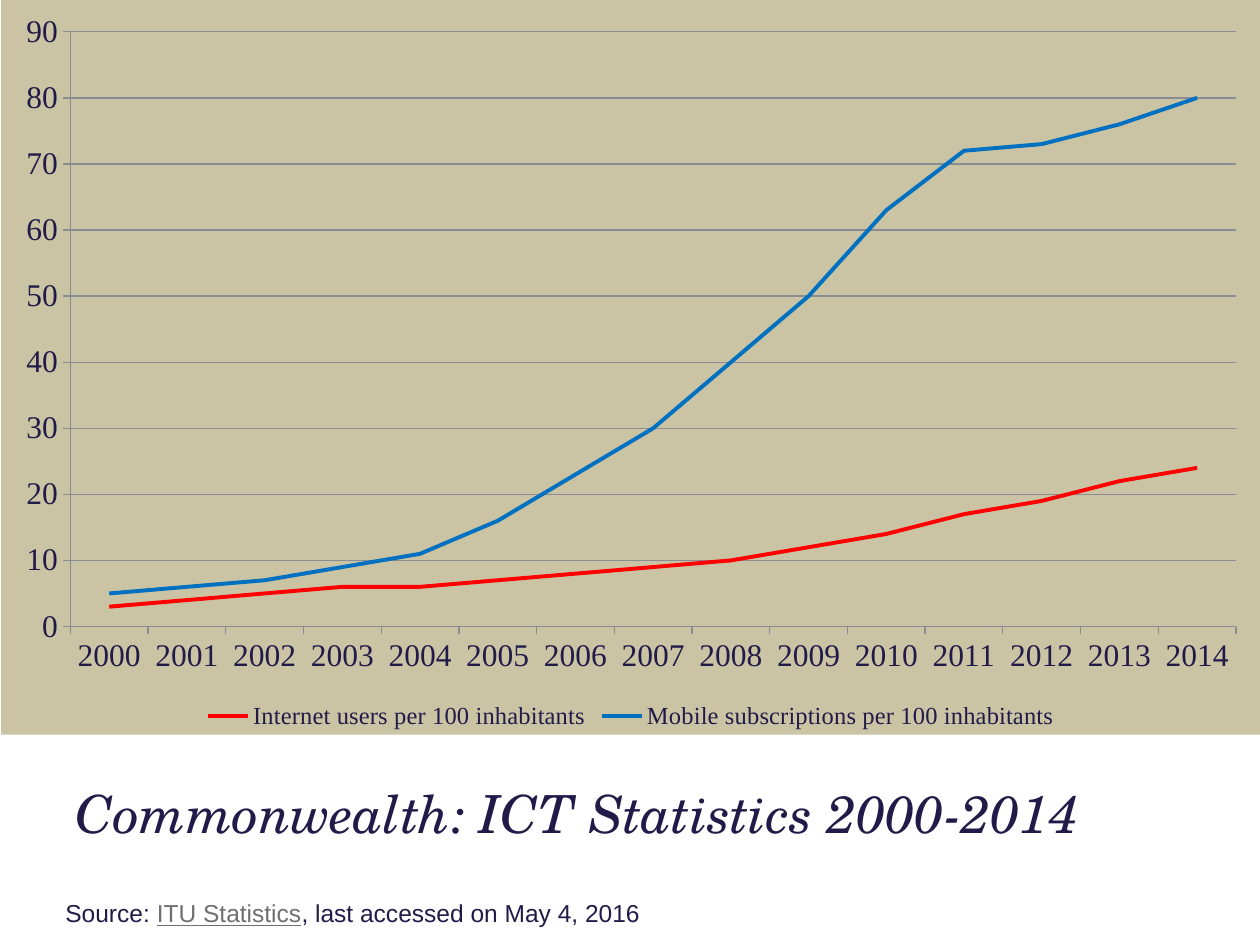
from dataclasses import dataclass

from lxml import etree
from pptx import Presentation
from pptx.chart.data import CategoryChartData
from pptx.dml.color import RGBColor
from pptx.enum import chart as ch, text as tx
from pptx.oxml import ns
from pptx.util import Inches, Pt

INK = RGBColor(0x22, 0x1A, 0x48)
LINK_GREY = RGBColor(0x6E, 0x6F, 0x6E)
GRID_GREY = RGBColor(0x8B, 0x8B, 0x92)
SAND = RGBColor(0xCA, 0xC4, 0xA5)
RED = RGBColor(0xFF, 0x00, 0x00)
BLUE = RGBColor(0x00, 0x70, 0xC0)


@dataclass
class Indicator:
    name: str
    values: tuple[int, ...]
    color: RGBColor


@dataclass
class Run:
    text: str
    font: str
    size: int
    color: RGBColor = INK
    italic: bool = False
    underline: bool = False


YEARS = [str(year) for year in range(2000, 2015)]
INDICATORS = [
    Indicator("Internet users per 100 inhabitants",
              (3, 4, 5, 6, 6, 7, 8, 9, 10, 12, 14, 17, 19, 22, 24), RED),
    Indicator("Mobile subscriptions per 100 inhabitants",
              (5, 6, 7, 9, 11, 16, 23, 30, 40, 50, 63, 72, 73, 76, 80), BLUE),
]
TITLE = [Run("Commonwealth: ICT Statistics 2000-2014", "TeX Gyre Schola", 30, italic=True)]
SOURCE = [
    Run("Source: ", "Arial", 14),
    Run("ITU Statistics", "Arial", 14, LINK_GREY, underline=True),
    Run(", last accessed on May 4, 2016", "Arial", 14),
]


def style_font(font, size: int, name: str = "Times New Roman") -> None:
    font.size, font.name = Pt(size), name
    font.color.rgb = INK


def fill_chart_area(chart, color: RGBColor) -> None:
    """Give the whole chart a plain background without an outline."""
    area = etree.Element(ns.qn("c:spPr"))
    solid = etree.SubElement(area, ns.qn("a:solidFill"))
    etree.SubElement(solid, ns.qn("a:srgbClr"), val=str(color))
    outline = etree.SubElement(area, ns.qn("a:ln"))
    etree.SubElement(outline, ns.qn("a:noFill"))
    chart.element.find(ns.qn("c:chart")).addnext(area)


def add_trend_chart(slide, indicators: list[Indicator]) -> None:
    data = CategoryChartData(number_format="0")
    data.categories = YEARS
    for indicator in indicators:
        data.add_series(indicator.name, indicator.values)
    chart = slide.shapes.add_chart(
        ch.XL_CHART_TYPE.LINE, Inches(0.01), Inches(0), Inches(10), Inches(5.83), data).chart
    style_font(chart.font, 18)
    fill_chart_area(chart, SAND)
    chart.has_title = False

    # Legend
    chart.has_legend = True
    chart.legend.position = ch.XL_LEGEND_POSITION.BOTTOM
    chart.legend.include_in_layout = False
    style_font(chart.legend.font, 14)

    # Axes and gridlines
    scale = chart.value_axis
    scale.minimum_scale, scale.maximum_scale, scale.major_unit = 0, 90, 10
    scale.tick_labels.number_format = "0"
    scale.tick_labels.number_format_is_linked = False
    scale.has_major_gridlines = True
    for axis in (chart.category_axis, scale):
        axis.major_tick_mark = ch.XL_TICK_MARK.OUTSIDE
        style_font(axis.tick_labels.font, 18)
    for line in (chart.category_axis.format.line, scale.format.line,
                 scale.major_gridlines.format.line):
        line.color.rgb = GRID_GREY
        line.width = Pt(0.75)

    # Indicator lines
    chart.plots[0].vary_by_categories = False
    for series, indicator in zip(chart.plots[0].series, indicators):
        series.smooth = False
        series.marker.style = ch.XL_MARKER_STYLE.NONE
        series.format.line.color.rgb = indicator.color
        series.format.line.width = Pt(2.25)


def add_text(slide, left: float, top: float, width: float, height: float,
             runs: list[Run], anchor: tx.MSO_ANCHOR) -> None:
    frame = slide.shapes.add_textbox(
        Inches(left), Inches(top), Inches(width), Inches(height)).text_frame
    frame.word_wrap = True
    frame.vertical_anchor = anchor
    for part in runs:
        run = frame.paragraphs[0].add_run()
        run.text = part.text
        style_font(run.font, part.size, part.font)
        run.font.color.rgb = part.color
        run.font.italic = part.italic
        run.font.underline = part.underline


def main() -> None:
    deck = Presentation()
    deck.slide_width, deck.slide_height = Inches(10), Inches(7.5)
    slide = deck.slides.add_slide(deck.slide_layouts[6])
    add_trend_chart(slide, INDICATORS)
    add_text(slide, 0.5, 5.67, 8.5, 1.55, TITLE, tx.MSO_ANCHOR.MIDDLE)
    add_text(slide, 0.42, 7.08, 8.67, 0.34, SOURCE, tx.MSO_ANCHOR.TOP)
    deck.save("out.pptx")


if __name__ == "__main__":
    main()
